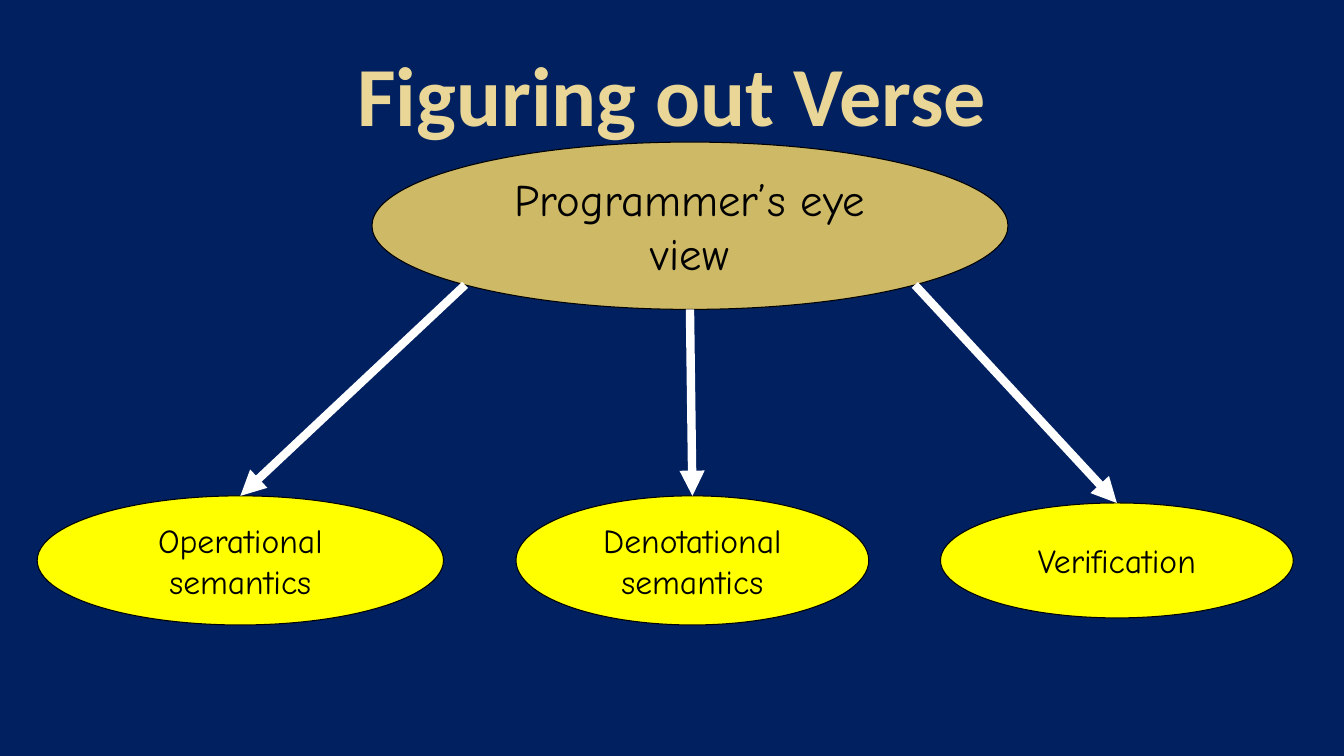
from math import cos, pi, sin

from lxml import etree
from pptx import Presentation
from pptx.dml.color import RGBColor
from pptx.enum import shapes, text
from pptx.oxml import ns
from pptx.util import Pt

COLORS = {
    "navy": "002060", "gold": "CEB966", "sand": "EAD696",
    "yellow": "FFFF00", "black": "000000", "white": "FFFFFF",
}


def paint(fill, name):
    fill.solid()
    fill.fore_color.rgb = RGBColor.from_string(COLORS[name])


def write(frame, words, font, size, color, bold=False):
    frame.word_wrap = True
    frame.auto_size = text.MSO_AUTO_SIZE.NONE
    frame.vertical_anchor = text.MSO_ANCHOR.MIDDLE
    para = frame.paragraphs[0]
    para.alignment = text.PP_ALIGN.CENTER
    run = para.add_run()
    run.text = words
    run.font.name, run.font.size, run.font.bold = font, Pt(size), bold
    paint(run.font.fill, color)


deck = Presentation()
deck.slide_width, deck.slide_height = Pt(960), Pt(540)
slide = deck.slides.add_slide(deck.slide_layouts[5])
paint(slide.background.fill, "navy")

# Title
title = slide.shapes.title
title.left, title.top, title.width, title.height = Pt(48), Pt(21.6), Pt(864), Pt(90)
write(title.text_frame, "Figuring out Verse", "Calibri", 60, "sand", True)

# Ovals: words, left, top, width, height, fill, text size
view = ("Programmer’s eye view", 265.7, 101.5, 454.3, 119.5, "gold", 32)
topics = [
    ("Operational semantics", 26.6, 354.2, 290.2, 92.2, "yellow", 24),
    ("Denotational semantics", 368.6, 354.2, 252, 92.2, "yellow", 24),
    ("Verification", 671.8, 359.3, 252, 82.1, "yellow", 24),
]
for words, left, top, width, height, fill, size in [view, *topics]:
    oval = slide.shapes.add_shape(
        shapes.MSO_SHAPE.OVAL, Pt(left), Pt(top), Pt(width), Pt(height))
    oval.shadow.inherit = False
    paint(oval.fill, fill)
    paint(oval.line.fill, "black")
    oval.line.width = Pt(0.75)
    write(oval.text_frame, words, "Comic Neue", size, "black")

# Arrows from the rim of the top oval to the top of each topic
_, left, top, width, height, _, _ = view
for angle, topic in zip((3 * pi / 4, pi / 2, pi / 4), topics):
    x = left + width / 2 * (1 + cos(angle))
    y = top + height / 2 * (1 + sin(angle))
    arrow = slide.shapes.add_connector(
        shapes.MSO_CONNECTOR.STRAIGHT,
        Pt(x), Pt(y), Pt(topic[1] + topic[3] / 2), Pt(topic[2]))
    paint(arrow.line.fill, "white")
    arrow.line.width = Pt(6)
    line = arrow.line.fill._xPr
    etree.SubElement(line, ns.qn("a:tailEnd"), type="triangle")
    etree.SubElement(line.getparent(), ns.qn("a:effectLst"))

deck.save("out.pptx")
